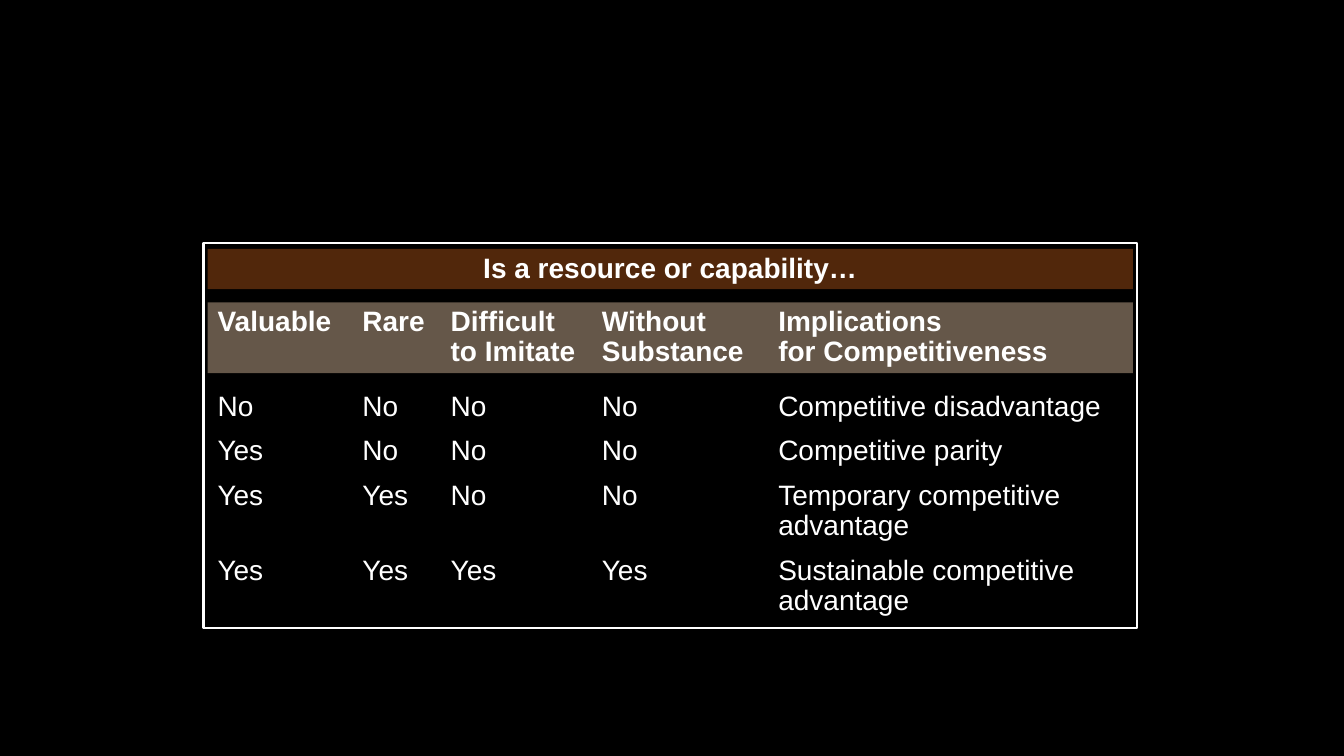
from lxml import etree
from pptx import Presentation
from pptx.dml.color import RGBColor
from pptx.enum.shapes import MSO_SHAPE as Shape
from pptx.enum.text import MSO_ANCHOR as Anchor, PP_ALIGN as Align
from pptx.oxml.ns import qn
from pptx.util import Pt

COLORS = {"background": "000000", "text": "FFFFFF", "frame": "FFFFFF",
          "title": "51270B", "header": "CAAF92"}
LEFT, WIDTH = 148.3, 661
ONE_LINE, TWO_LINES = 28.8, 50.5
ROW_GAP = 3
FIRST_ROW_TOP = 276.5
COLUMN_TABS = (103.5, 166.5, 274.5, 400.5)

HEADER = ["Valuable\tRare\tDifficult\tWithout\tImplications",
          "\t\tto Imitate\tSubstance\tfor Competitiveness"]
ROWS = [
    ["No\tNo\tNo\tNo\tCompetitive disadvantage"],
    ["Yes\tNo\tNo\tNo\tCompetitive parity"],
    ["Yes\tYes\tNo\tNo\tTemporary competitive", "\t\t\t\tadvantage"],
    ["Yes\tYes\tYes\tYes\tSustainable competitive", "\t\t\t\tadvantage"],
]


def color(name):
    return RGBColor.from_string(COLORS[name])


def add_column_tabs(para):
    tabs = etree.SubElement(para._p.get_or_add_pPr(), qn("a:tabLst"))
    for position in COLUMN_TABS:
        etree.SubElement(tabs, qn("a:tab"), pos=str(Pt(position)), algn="l")


def write_lines(box, lines, bold=False, centered=False):
    frame = box.text_frame
    frame.word_wrap = True
    frame.vertical_anchor = Anchor.TOP
    for index, line in enumerate(lines):
        para = frame.add_paragraph() if index else frame.paragraphs[0]
        para.alignment = Align.CENTER if centered else Align.LEFT
        para.line_spacing = 0.9
        if not centered:
            add_column_tabs(para)
        span = para.add_run()
        span.text = line
        span.font.name = "Arial"
        span.font.size = Pt(20)
        span.font.bold = bold
        span.font.color.rgb = color("text")


def add_band(page, top, height, fill, opacity=100):
    band = page.shapes.add_shape(Shape.RECTANGLE, Pt(LEFT), Pt(top), Pt(WIDTH), Pt(height))
    band.shadow.inherit = False
    band.line.fill.background()
    band.fill.solid()
    band.fill.fore_color.rgb = color(fill)
    if opacity < 100:
        tint = band._element.spPr.find(qn("a:solidFill"))[0]
        etree.SubElement(tint, qn("a:alpha"), val=str(opacity * 1000))
    return band


def add_rows(page):
    top = FIRST_ROW_TOP
    for lines in ROWS:
        height = ONE_LINE if len(lines) == 1 else TWO_LINES
        box = page.shapes.add_textbox(Pt(LEFT), Pt(top), Pt(WIDTH), Pt(height))
        write_lines(box, lines)
        top += height + ROW_GAP


def add_frame(page):
    frame = page.shapes.add_shape(Shape.RECTANGLE, Pt(145.4), Pt(173.5), Pt(666.7), Pt(275))
    frame.shadow.inherit = False
    frame.fill.background()
    frame.line.color.rgb = color("frame")
    frame.line.width = Pt(1.5)


def main():
    deck = Presentation()
    deck.slide_width, deck.slide_height = Pt(960), Pt(540)
    page = deck.slides.add_slide(deck.slide_layouts[6])
    page.background.fill.solid()
    page.background.fill.fore_color.rgb = color("background")

    header = add_band(page, 216, TWO_LINES, "header", opacity=50)
    write_lines(header, HEADER, bold=True)
    add_rows(page)
    title = add_band(page, 177.8, ONE_LINE, "title")
    write_lines(title, ["Is a resource or capability…"], bold=True, centered=True)
    add_frame(page)
    deck.save("out.pptx")


if __name__ == "__main__":
    main()
